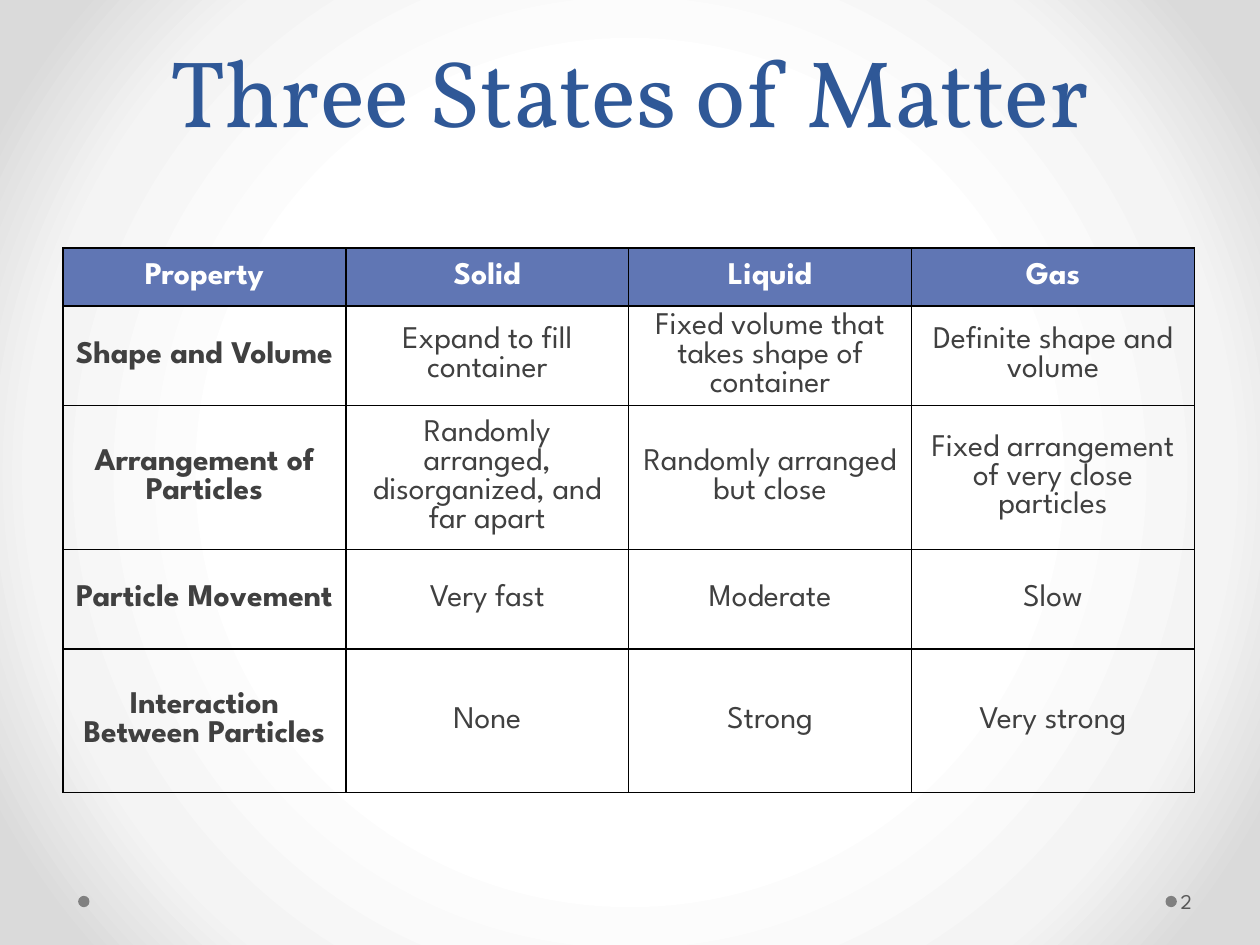
from pptx import Presentation, util as u
from pptx.dml.color import RGBColor
from pptx.enum import shapes, text
from pptx.oxml import parse_xml
from pptx.oxml.ns import nsdecls

COLORS = {"title": "2F5897", "header": "6076B4", "white": "FFFFFF", "body": "404040",
          "number": "595959", "dot": "808080", "border": "000000"}
STOPS = [(50, "FFFFFF"), (76, "F4F4F4"), (92, "DADADA")]
ROWS = [
    ["Property", "Solid", "Liquid", "Gas"],
    ["Shape and Volume", "Expand to fill container",
     "Fixed volume that takes shape of container", "Definite shape and volume"],
    ["Arrangement of Particles", "Randomly arranged, disorganized, and far apart",
     "Randomly arranged but close", "Fixed arrangement of very close particles"],
    ["Particle Movement", "Very fast", "Moderate", "Slow"],
    ["Interaction Between Particles", "None", "Strong", "Very strong"],
]
HEIGHTS = [0.46, 0.79, 1.14, 0.79, 1.14]
TABLE_WIDTH = 8.98


def style(p, font, size, color, bold=False):
    for r in p.runs:
        r.font.name = font
        r.font.size = u.Pt(size)
        r.font.bold = bold
        r.font.color.rgb = RGBColor.from_string(COLORS[color])


def add_borders(cell):
    tcPr = cell._tc.get_or_add_tcPr()
    for i, side in enumerate(("lnL", "lnR", "lnT", "lnB")):
        tcPr.insert(i, parse_xml(
            f'<a:{side} {nsdecls("a")} w="12700"><a:solidFill>'
            f'<a:srgbClr val="{COLORS["border"]}"/></a:solidFill></a:{side}>'))


prs = Presentation()
prs.slide_width, prs.slide_height = u.Inches(10), u.Inches(7.5)
s = prs.slides.add_slide(prs.slide_layouts[5])

stops = "".join(f'<a:gs pos="{pos * 1000}"><a:srgbClr val="{c}"/></a:gs>' for pos, c in STOPS)
s._element.cSld.insert(0, parse_xml(
    f'<p:bg {nsdecls("p", "a")}><p:bgPr><a:gradFill rotWithShape="1"><a:gsLst>{stops}</a:gsLst>'
    '<a:path path="circle"><a:fillToRect l="50000" t="50000" r="50000" b="50000"/></a:path>'
    '</a:gradFill><a:effectLst/></p:bgPr></p:bg>'))

for x in (0.62, 9.25):
    dot = s.shapes.add_shape(shapes.MSO_SHAPE.OVAL, u.Inches(x), u.Inches(7.11),
                             u.Inches(0.09), u.Inches(0.09))
    dot.shadow.inherit = False
    dot.fill.solid()
    dot.fill.fore_color.rgb = RGBColor.from_string(COLORS["dot"])
    dot.line.fill.background()

title = s.shapes.title
title.left, title.top, title.width, title.height = (u.Inches(v) for v in (0.5, 0, 9, 1.21))
tf = title.text_frame
tf.text = "Three States of Matter"
tf.auto_size = text.MSO_AUTO_SIZE.NONE
tf.vertical_anchor = text.MSO_ANCHOR.BOTTOM
p = tf.paragraphs[0]
p.alignment = text.PP_ALIGN.CENTER
p.line_spacing = u.Pt(58)
style(p, "Vollkorn", 54, "title")

number = s.shapes.add_textbox(u.Inches(9.34), u.Inches(6.95), u.Inches(0.61), u.Inches(0.4))
tf = number.text_frame
tf.text = "2"
tf.word_wrap = True
tf.vertical_anchor = text.MSO_ANCHOR.MIDDLE
tf.margin_left = u.Inches(0.03)
tf.margin_right = tf.margin_top = tf.margin_bottom = u.Inches(0.05)
style(tf.paragraphs[0], "League Spartan", 12, "number")

table = s.shapes.add_table(len(ROWS), len(ROWS[0]), u.Inches(0.5), u.Inches(1.97),
                           u.Inches(TABLE_WIDTH), u.Inches(sum(HEIGHTS))).table
table.horz_banding = False
for column in table.columns:
    column.width = u.Inches(TABLE_WIDTH / len(ROWS[0]))
for i, (row, height) in enumerate(zip(ROWS, HEIGHTS)):
    table.rows[i].height = u.Inches(height)
    for j, label in enumerate(row):
        cell = table.cell(i, j)
        cell.text_frame.text = label
        cell.vertical_anchor = text.MSO_ANCHOR.MIDDLE
        if i == 0:
            cell.fill.solid()
            cell.fill.fore_color.rgb = RGBColor.from_string(COLORS["header"])
        else:
            cell.fill.background()
        add_borders(cell)
        p = cell.text_frame.paragraphs[0]
        p.alignment = text.PP_ALIGN.CENTER
        p.line_spacing = u.Pt(16.5)
        style(p, "League Spartan", 18, "body" if i else "white", i == 0 or j == 0)

prs.save("out.pptx")
